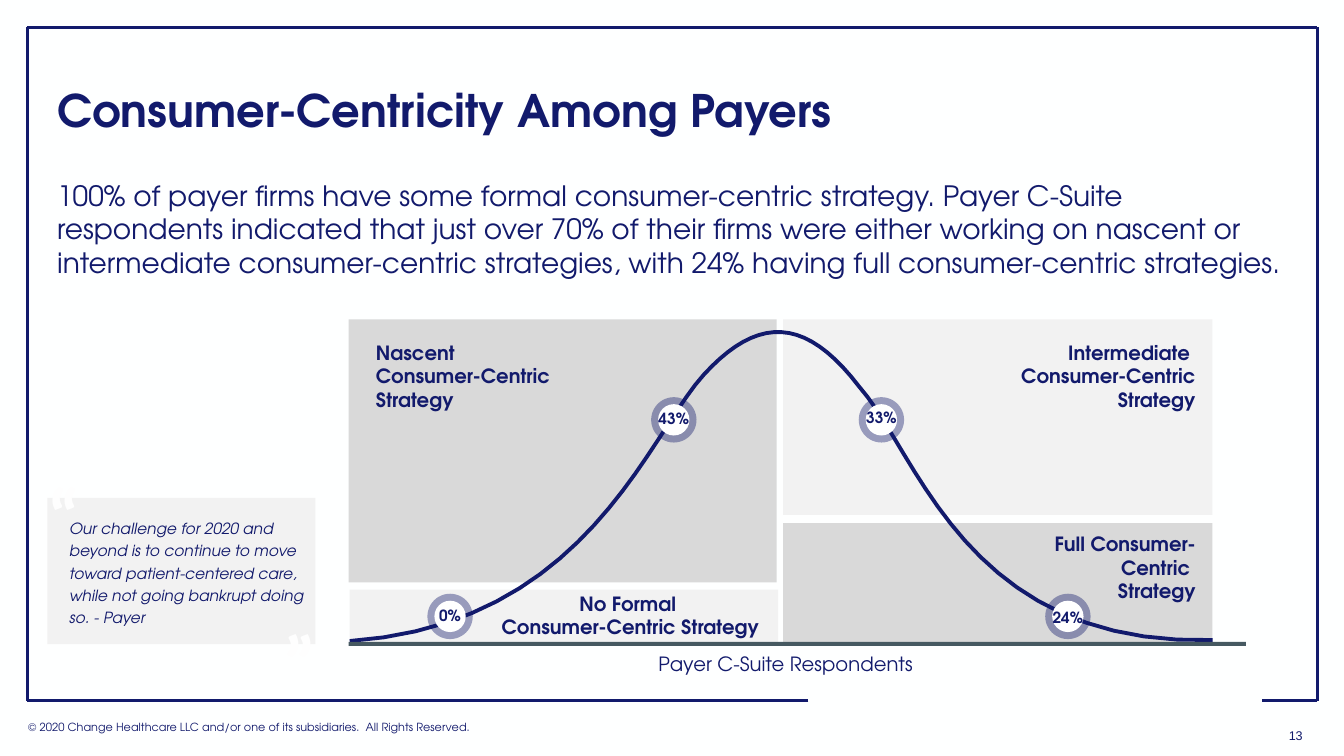
from lxml.etree import SubElement
from pptx import Presentation
from pptx.dml.color import RGBColor
from pptx.enum.shapes import MSO_CONNECTOR, MSO_SHAPE
from pptx.enum.text import MSO_ANCHOR, PP_ALIGN
from pptx.oxml.ns import qn
from pptx.util import Pt

COLORS = {"page": "FEFFFF", "navy": "121A6C", "mid": "D9D9D9", "pale": "F2F2F2",
          "slate": "465961", "white": "FFFFFF", "quote": "FEFEFE"}
FONT = "TeX Gyre Adventor"
LEFT, CENTER, RIGHT = PP_ALIGN.LEFT, PP_ALIGN.CENTER, PP_ALIGN.RIGHT

FRAME = [(577.4, 500.4, 19.4, 500.4), (941, 19.4, 19.4, 19.4),
         (941, 19.4, 941, 500.4), (19.4, 19.4, 19.4, 500.4),
         (941, 500.4, 901.4, 500.4)]

FOOTER = "© 2020 Change Healthcare LLC and/or one of its subsidiaries.\u00a0 All Rights Reserved."
BODY = ("100% of payer firms have some formal consumer-centric strategy. Payer C-Suite "
        "respondents indicated that just over 70% of their firms were either working on "
        "nascent or intermediate consumer-centric strategies, with 24% having full "
        "consumer-centric strategies.")
QUOTE = ("Our challenge for 2020 and beyond is to continue to move toward "
         "patient-centered care, while not going bankrupt doing so. - Payer")

TEXTS = [
    ((13, 511.2, 469.4, 17.3), [FOOTER], {"size": 8}, {}),
    ((910.8, 509.8, 29.5, 31), ["13"], {"size": 9, "name": "Arial"},
     {"align": CENTER, "anchor": MSO_ANCHOR.MIDDLE}),
    ((33.8, 28.8, 892.8, 104.4), ["Consumer-Centricity Among Payers"],
     {"size": 32, "bold": True}, {"anchor": MSO_ANCHOR.MIDDLE, "spacing": 0.9}),
    ((33.8, 123.8, 892.8, 82.8), [BODY], {"size": 20}, {}),
    ((412.6, 462.2, 297.4, 24.5), ["Payer C-Suite Respondents"], {"size": 14},
     {"align": CENTER}),
]

PANELS = [((249.1, 228.2, 305.6, 187.9), "mid"), ((559.4, 228.2, 306.7, 139.7), "pale"),
          ((249.8, 421.2, 306, 37.4), "pale"), ((559.4, 373.7, 306.7, 85.7), "mid")]
BASELINE = (249.1, 458.6, 640.8, 2.9)

CURVE_START = (249.8, 457.9)
CURVE = [((418.3, 446.4), (462.2, 312.5), (502.6, 267.8)),
         ((541.4, 225.4), (575.3, 226.1), (613.4, 275.8)),
         ((655.9, 323.3), (689, 462.2), (866.2, 457.2))]
STEPS = 20

LABELS = [
    ((261.4, 239.8, 187.9, 58.3), ["Nascent", "Consumer-Centric", "Strategy"], LEFT),
    ((339.1, 419, 222.5, 41), ["No Formal ", "Consumer-Centric Strategy"], CENTER),
    ((719.3, 239.8, 141.8, 58.3), ["Intermediate ", "Consumer-Centric ", "Strategy"], RIGHT),
    ((707.8, 376.6, 153.4, 58.3), ["Full Consumer-Centric ", "Strategy"], RIGHT),
]

RING, DOT = 32.4, 22.4
VALUE_W, VALUE_H = 50.4, 20.9
MARKERS = [("0%", 305.3, 424.1, 429.1), ("43%", 465.1, 283.7, 288.7),
           ("33%", 613.4, 283.7, 288), ("24%", 746.6, 424.1, 430.6)]

QUOTE_BOX = (33.8, 355.7, 191.5, 104.4)
QUOTE_MARKS = [("“", 25.9, 330.5), ("”", 195.1, 434.9)]


def rgb(name):
    return RGBColor.from_string(COLORS[name])


def pts(box):
    return [Pt(v) for v in box]


def write(sp, lines, font, align=LEFT, anchor=MSO_ANCHOR.TOP, spacing=None, wrap=True,
          color="navy"):
    tf = sp.text_frame
    for key, value in {"word_wrap": wrap, "vertical_anchor": anchor}.items():
        setattr(tf, key, value)
    fmt = {"name": FONT, **font, "size": Pt(font["size"])}
    for i, line in enumerate(lines):
        p = tf.paragraphs[0] if i == 0 else tf.add_paragraph()
        for key, value in {"alignment": align, "line_spacing": spacing}.items():
            setattr(p, key, value)
        r = p.add_run()
        r.text = line
        for key, value in fmt.items():
            setattr(r.font, key, value)
        r.font.color.rgb = rgb(color)
    return tf


def add_text(s, box, lines, font, **opts):
    return write(s.shapes.add_textbox(*pts(box)), lines, font, **opts)


def add_filled(s, kind, box, color, alpha=None):
    sp = s.shapes.add_shape(kind, *pts(box))
    sp.shadow.inherit = False
    sp.fill.solid()
    sp.fill.fore_color.rgb = rgb(color)
    sp.line.fill.background()
    if alpha:
        clr = sp.fill._xPr.find(".//" + qn("a:srgbClr"))
        SubElement(clr, qn("a:alpha"), val=str(alpha * 1000))
    return sp


def curve_points():
    a = CURVE_START
    for b, c, d in CURVE:
        for i in range(1, STEPS + 1):
            t = i / STEPS
            u = 1 - t
            yield tuple(Pt(u**3 * a[k] + 3 * u * u * t * b[k] + 3 * u * t * t * c[k]
                           + t**3 * d[k]) for k in (0, 1))
        a = d


def add_curve(s):
    builder = s.shapes.build_freeform(*pts(CURVE_START))
    builder.add_line_segments(list(curve_points()), close=False)
    sp = builder.convert_to_shape()
    sp.shadow.inherit = False
    sp.fill.background()
    sp.line.color.rgb = rgb("navy")
    sp.line.width = Pt(2.75)


def add_frame(s):
    for ends in FRAME:
        line = s.shapes.add_connector(MSO_CONNECTOR.STRAIGHT, *pts(ends))
        line.line.color.rgb = rgb("navy")
        line.line.width = Pt(2)
        SubElement(line._element.spPr, qn("a:effectLst"))


def add_marker(s, value, x, y, text_y):
    inset = (RING - DOT) / 2
    add_filled(s, MSO_SHAPE.OVAL, (x, y, RING, RING), "navy", 40)
    add_filled(s, MSO_SHAPE.OVAL, (x + inset, y + inset, DOT, DOT), "white")
    add_text(s, (x + (RING - VALUE_W) / 2, text_y, VALUE_W, VALUE_H), [value],
             {"size": 11, "bold": True}, align=CENTER)


def add_quote(s):
    sp = add_filled(s, MSO_SHAPE.RECTANGLE, QUOTE_BOX, "pale")
    tf = write(sp, [QUOTE], {"size": 11, "italic": True}, anchor=MSO_ANCHOR.MIDDLE,
               spacing=1.2)
    pPr = tf.paragraphs[0]._p.get_or_add_pPr()
    pPr.set("marL", str(Pt(8.64)))
    pPr.set("indent", "0")
    for mark, x, y in QUOTE_MARKS:
        tf = add_text(s, (x, y, 38.9, 72.7), [mark],
                      {"size": 54, "bold": True, "name": "Calibri"}, align=CENTER,
                      wrap=False, color="quote")
        rPr = tf.paragraphs[0].runs[0].font._element
        rPr.set("spc", "50")
        ln = SubElement(rPr, qn("a:ln"), w=str(Pt(0.75)))
        rPr.insert(0, ln)
        SubElement(SubElement(ln, qn("a:solidFill")), qn("a:srgbClr"), val=COLORS["navy"])


def main():
    prs = Presentation()
    prs.slide_width, prs.slide_height = Pt(960), Pt(540)
    s = prs.slides.add_slide(prs.slide_layouts[6])
    s.background.fill.solid()
    s.background.fill.fore_color.rgb = rgb("page")
    add_frame(s)
    for box, lines, font, opts in TEXTS:
        add_text(s, box, lines, font, **opts)
    for box, color in PANELS:
        add_filled(s, MSO_SHAPE.RECTANGLE, box, color)
    add_curve(s)
    add_filled(s, MSO_SHAPE.RECTANGLE, BASELINE, "slate")
    for box, lines, align in LABELS:
        add_text(s, box, lines, {"size": 14, "bold": True}, align=align)
    for marker in MARKERS:
        add_marker(s, *marker)
    add_quote(s)
    prs.save("out.pptx")


if __name__ == "__main__":
    main()
